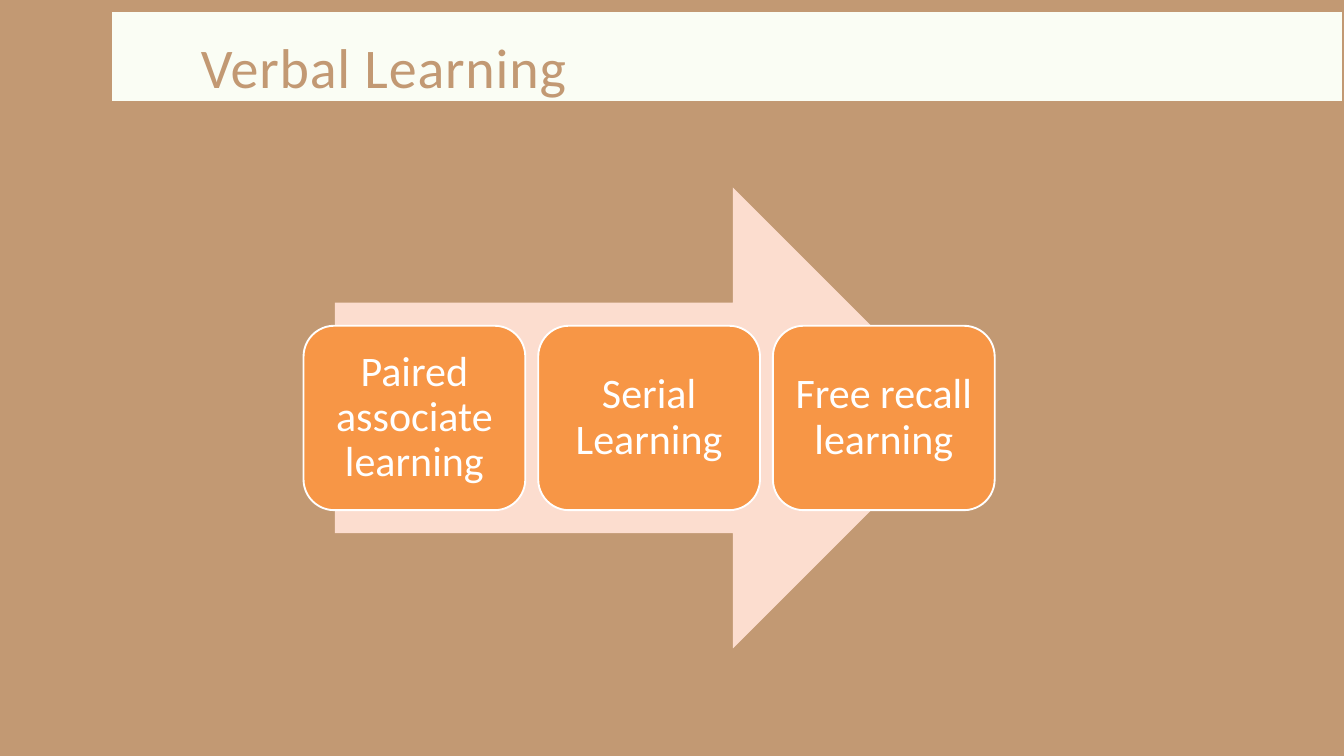
from collections import namedtuple
from dataclasses import dataclass

from pptx import Presentation
from pptx.dml.color import RGBColor as Rgb
from pptx.enum.shapes import MSO_SHAPE as Shape
from pptx.enum.text import MSO_ANCHOR as Anchor, MSO_AUTO_SIZE as AutoSize, PP_ALIGN as Align
from pptx.util import Inches, Pt

Box = namedtuple("Box", "left top width height")


@dataclass(frozen=True)
class Theme:
    """Colours, font and type sizes of the deck."""
    font: str = "Calibri"
    tan: str = "C29973"
    ivory: str = "FAFDF4"
    blush: str = "FCDDCF"
    orange: str = "F79646"
    white: str = "FFFFFF"
    title_size: int = 60
    card_size: int = 45


THEME = Theme()
WIDTH, HEIGHT = 20, 11.25
METHODS = ("Paired associate learning", "Serial Learning", "Free recall learning")


def part(box, left, top, width, height):
    """Return the part of a box given by shares of its size."""
    return Box(box.left + left * box.width, box.top + top * box.height,
               width * box.width, height * box.height)


def add_block(page, kind, box, fill, outline=None):
    """Draw a flat preset shape in a box."""
    block = page.shapes.add_shape(kind, *map(Inches, box))
    block.shadow.inherit = False
    block.fill.solid()
    block.fill.fore_color.rgb = Rgb.from_string(fill)
    if outline:
        block.line.color.rgb = Rgb.from_string(outline)
        block.line.width = Pt(2)
    else:
        block.line.fill.background()
    return block


def write(shape, text, *, size, color, align, anchor, insets, spacing,
          before=0, tracking=0, fit=AutoSize.NONE):
    """Write one formatted paragraph in a shape."""
    frame = shape.text_frame
    frame.word_wrap = True
    frame.auto_size = fit
    frame.vertical_anchor = anchor
    (frame.margin_left, frame.margin_top,
     frame.margin_right, frame.margin_bottom) = map(Inches, insets)
    para = frame.paragraphs[0]
    para.alignment = align
    para.line_spacing = spacing
    para.space_before = Pt(before)
    span = para.add_run()
    span.text = text
    span.font.name = THEME.font
    span.font.size = Pt(size)
    span.font.color.rgb = Rgb.from_string(color)
    if tracking:
        span.font._element.set("spc", str(round(tracking * 100)))


def add_heading(page, box, text):
    """Place the banner and the title on it."""
    add_block(page, Shape.RECTANGLE, box, THEME.ivory)
    title = page.shapes.title
    page.shapes._spTree.append(title._element)
    title.left, title.top, title.width, title.height = map(
        Inches, part(box, 0.072, 0.136, 0.824, 0.8))
    write(title, text, size=THEME.title_size, color=THEME.tan, align=Align.LEFT,
          anchor=Anchor.TOP, insets=(0, 0.01, 0, 0), spacing=1.11, before=1,
          tracking=0.9, fit=AutoSize.SHAPE_TO_FIT_TEXT)


def add_process(page, box, labels):
    """Place a wide arrow with a centred row of cards on it."""
    add_block(page, Shape.RIGHT_ARROW, part(box, 0.075, 0, 0.85, 1), THEME.blush)
    card_share, gap_share = 0.3, 0.0175
    pitch = card_share + gap_share
    start = (1 - len(labels) * pitch + gap_share) / 2
    for index, label in enumerate(labels):
        place = part(box, start + index * pitch, 0.3, card_share, 0.4)
        card = add_block(page, Shape.ROUNDED_RECTANGLE, place, THEME.orange, THEME.white)
        write(card, label, size=THEME.card_size, color=THEME.white, align=Align.CENTER,
              anchor=Anchor.MIDDLE, insets=(0.18,) * 4, spacing=0.9)


def main():
    """Build the deck and save it."""
    deck = Presentation()
    deck.slide_width, deck.slide_height = Inches(WIDTH), Inches(HEIGHT)
    page = deck.slides.add_slide(deck.slide_layouts[5])
    page.background.fill.solid()
    page.background.fill.fore_color.rgb = Rgb.from_string(THEME.tan)
    add_heading(page, Box(1.67, 0.18, 18.3, 1.32), "Verbal Learning")
    add_process(page, Box(4.16, 2.79, 11, 6.86), METHODS)
    deck.save("out.pptx")


if __name__ == "__main__":
    main()
